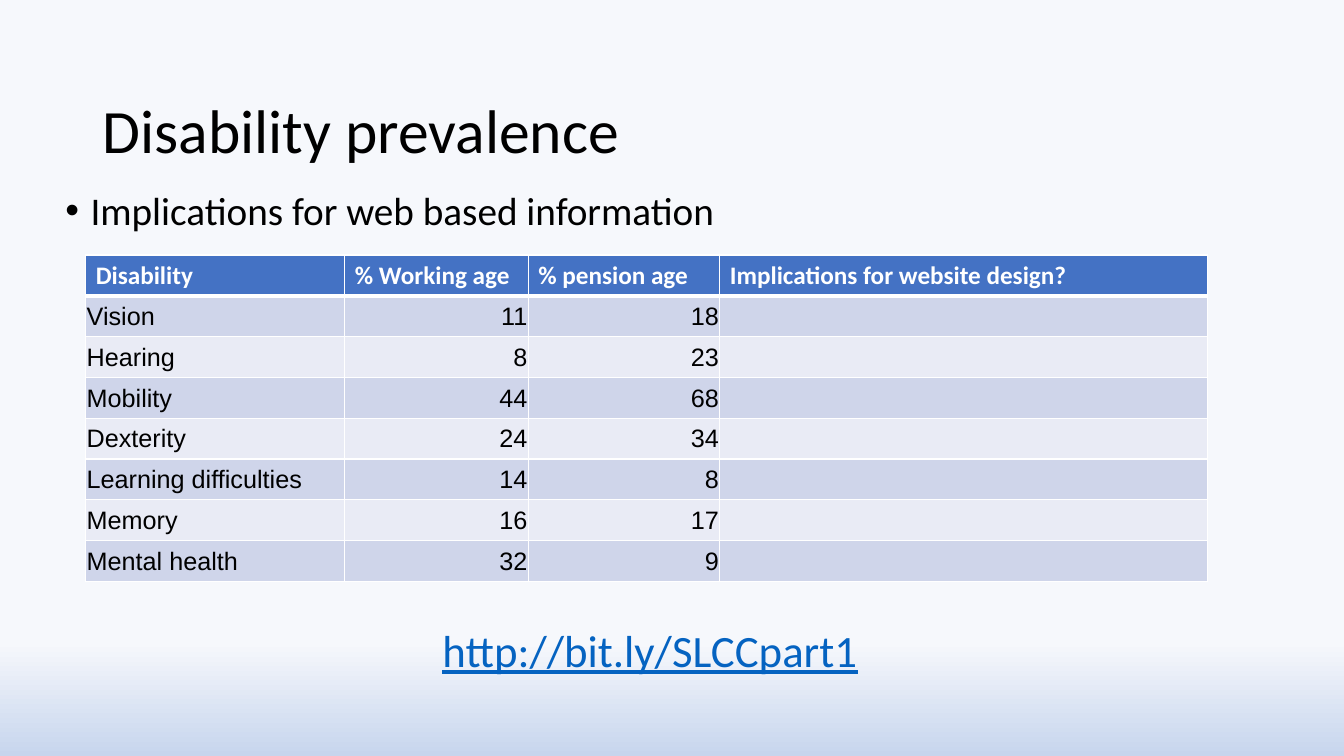
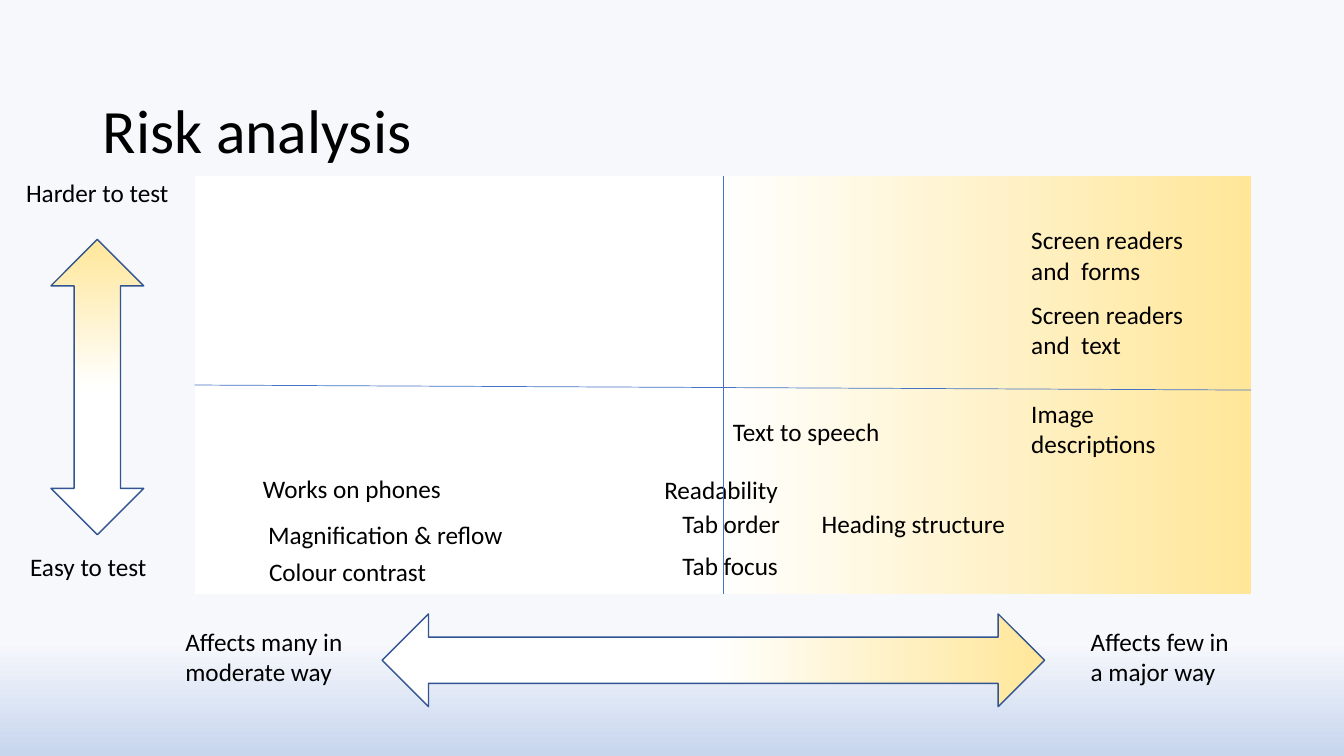
from lxml import etree
from pptx import Presentation
from pptx import util as u
from pptx.dml.color import RGBColor
from pptx.enum import shapes, text
from pptx.oxml.ns import qn

WIDTH, HEIGHT = u.Inches(13.33), u.Inches(7.5)
ROWS = 75

BLACK, WHITE, BLUE, NAVY = "000000", "FFFFFF", "4472C4", "325491"
LINK, BAND_DARK, BAND_LIGHT = "0563C1", "CFD5EA", "E9EBF5"
BACKDROP = ((0.85, "F6F8FC"), (1, "C7D5ED"))
RISK = ((0.49, WHITE), (1, "FFE699"))

TITLE = {"size": u.Pt(44)}
BULLET = {"size": u.Pt(28)}
ADDRESS = {"size": u.Pt(32), "color": LINK, "underline": True}
LABEL = {"size": u.Pt(18)}
HEADING = {"size": u.Pt(18), "color": WHITE, "bold": True}
ENTRY = {"size": u.Pt(18), "name": "Arial", "bold": False}


def rgb(value):
    return RGBColor.from_string(value)


def cells(count):
    return round(count * HEIGHT / ROWS)


def set_all(target, values):
    for name, value in values.items():
        setattr(target, name, value)


def gradient(fill, stops, angle=0):
    fill.gradient()
    fill.gradient_angle = angle
    for stop, (position, color) in zip(fill.gradient_stops, stops):
        stop.position = position
        stop.color.rgb = rgb(color)


class Deck:
    def __init__(self):
        self.show = Presentation()
        set_all(self.show, {"slide_width": WIDTH, "slide_height": HEIGHT})
        gradient(self.show.slide_master.background.fill, BACKDROP, 270)
        self.slide = None

    def page(self, title):
        self.slide = self.show.slides.add_slide(self.show.slide_layouts[6])
        heading = self.text((9.2, 4, 115, 18.5), title, TITLE,
                            vertical_anchor=text.MSO_ANCHOR.MIDDLE)
        heading.line_spacing = 0.9

    def styled_run(self, paragraph, words, style):
        run = paragraph.add_run()
        run.text = words
        values = {"name": "Calibri", "color": BLACK, **style}
        run.font.color.rgb = rgb(values.pop("color"))
        set_all(run.font, values)

    def text(self, place, words, style, **frame_values):
        frame = self.slide.shapes.add_textbox(*map(cells, place)).text_frame
        set_all(frame, {"word_wrap": True, **frame_values})
        self.styled_run(frame.paragraphs[0], words, style)
        return frame.paragraphs[0]

    def label(self, place, words, style=LABEL):
        self.text(place, words, style,
                  auto_size=text.MSO_AUTO_SIZE.SHAPE_TO_FIT_TEXT)

    def bullet(self, place, words):
        paragraph = self.text(place, words, BULLET)
        paragraph.line_spacing = 0.9
        props = paragraph._p.get_or_add_pPr()
        props.set("marL", str(cells(2.5)))
        props.set("indent", str(cells(-2.5)))
        etree.SubElement(props, qn("a:buFont")).set("typeface", "Arial")
        etree.SubElement(props, qn("a:buChar")).set("char", "•")

    def shape(self, kind, place, outline=None, rotation=0):
        shape = self.slide.shapes.add_shape(kind, *map(cells, place))
        shape.shadow.inherit = False
        shape.rotation = rotation
        gradient(shape.fill, RISK)
        if outline:
            shape.line.color.rgb = rgb(outline)
            shape.line.width = u.Pt(1)
        else:
            shape.line.fill.background()
        return shape

    def line(self, start, end, begin=None, finish=None):
        line = self.slide.shapes.add_connector(
            shapes.MSO_CONNECTOR.STRAIGHT, *map(cells, start + end))
        if begin:
            line.begin_connect(*begin)
        if finish:
            line.end_connect(*finish)
        line.line.color.rgb = rgb(BLUE)
        line.line.width = u.Pt(0.5)
        etree.SubElement(line._element.spPr, qn("a:effectLst"))

    def borders(self, cell, top, bottom):
        props = cell._tc.get_or_add_tcPr()
        for side, width in zip("LRTB", (1, 1, top, bottom)):
            edge = etree.SubElement(props, qn("a:ln" + side))
            edge.set("w", str(u.Pt(width)))
            paint = etree.SubElement(edge, qn("a:solidFill"))
            etree.SubElement(paint, qn("a:srgbClr")).set("val", WHITE)

    def table(self, place, widths, records):
        table = self.slide.shapes.add_table(
            len(records), len(widths), *map(cells, place)).table
        for column, width in zip(table.columns, widths):
            column.width = cells(width)
        for r, record in enumerate(records):
            band = BLUE if r == 0 else (BAND_LIGHT, BAND_DARK)[r % 2]
            for c, words in enumerate(record):
                cell = table.cell(r, c)
                self.borders(cell, 3 if r == 1 else 1, 3 if r == 0 else 1)
                cell.fill.solid()
                cell.fill.fore_color.rgb = rgb(band)
                if words == "":
                    continue
                paragraph = cell.text_frame.paragraphs[0]
                self.styled_run(paragraph, str(words), ENTRY if r else HEADING)
                if r:
                    set_all(cell, {"vertical_anchor": text.MSO_ANCHOR.MIDDLE,
                                   "margin_left": cells(0.1),
                                   "margin_right": cells(0.1),
                                   "margin_top": cells(0.1),
                                   "margin_bottom": 0})
                    if c:
                        paragraph.alignment = text.PP_ALIGN.RIGHT


def prevalence(deck):
    deck.page("Disability prevalence")
    deck.bullet((5.5, 18.5, 118.7, 48), "Implications for web based information")
    deck.table((8.5, 25.3, 111.3, 32.4), (25.7, 18.2, 19, 48.4), (
        ("Disability", "% Working age", "% pension age",
         "Implications for website design?"),
        ("Vision", 11, 18, ""),
        ("Hearing", 8, 23, ""),
        ("Mobility", 44, 68, ""),
        ("Dexterity", 24, 34, ""),
        ("Learning difficulties", 14, 8, ""),
        ("Memory", 16, 17, ""),
        ("Mental health", 32, 9, ""),
    ))
    deck.label((42.9, 61.3, 44.8, 6.4), "http://bit.ly/SLCCpart1", ADDRESS)


def risk(deck):
    deck.page("Risk analysis")
    left, top, width, height = 19.3, 17.5, 104.8, 41.4
    middle, centre = left + width / 2, top + height / 2
    right, bottom = left + width, top + height
    plane = deck.shape(shapes.MSO_SHAPE.RECTANGLE, (left, top, width, height))
    one_line, two_lines = 4, 7.1
    major, tabs = 101.3, 66.7
    for x, y, wide, tall, words in (
        (25.6, 51, 27.8, one_line, "Magnification & reflow"),
        (80.5, 49.9, 23.5, one_line, "Heading structure"),
        (25.7, 54.7, 19.8, one_line, "Colour contrast"),
        (tabs, 49.9, 12.7, one_line, "Tab order"),
        (tabs, 54.1, 12.7, one_line, "Tab focus"),
        (middle, 40.8, 19.8, one_line, "Text to speech"),
        (25.1, 46.5, 20.3, one_line, "Works on phones"),
        (major, 21.8, 18.4, two_lines, "Screen readers and  forms"),
        (major, 29.2, 18.4, two_lines, "Screen readers and  text"),
        (major, 39, 18.4, two_lines, "Image descriptions"),
        (64.9, 46.6, 15.6, one_line, "Readability"),
        (17.4, 61.6, 24.8, two_lines, "Affects many in moderate way"),
        (107.2, 61.6, 16.4, two_lines, "Affects few in a major way"),
        (2, 54.2, 16.9, one_line, "Easy to test"),
        (1.6, 17.1, 24.8, one_line, "Harder to test"),
    ):
        deck.label((x, y, wide, tall), words)
    deck.line((middle, top), (middle, bottom), (plane, 0), (plane, 2))
    deck.line((left, centre), (right, centre + 0.5), (plane, 1))
    arrow = shapes.MSO_SHAPE.LEFT_RIGHT_ARROW
    deck.shape(arrow, (37.9, 60.9, 65.7, 9.2), NAVY)
    deck.shape(arrow, (-5, 33.8, 29.3, 9.2), NAVY, 270)


def main():
    deck = Deck()
    prevalence(deck)
    risk(deck)
    deck.show.save("out.pptx")


if __name__ == "__main__":
    main()
